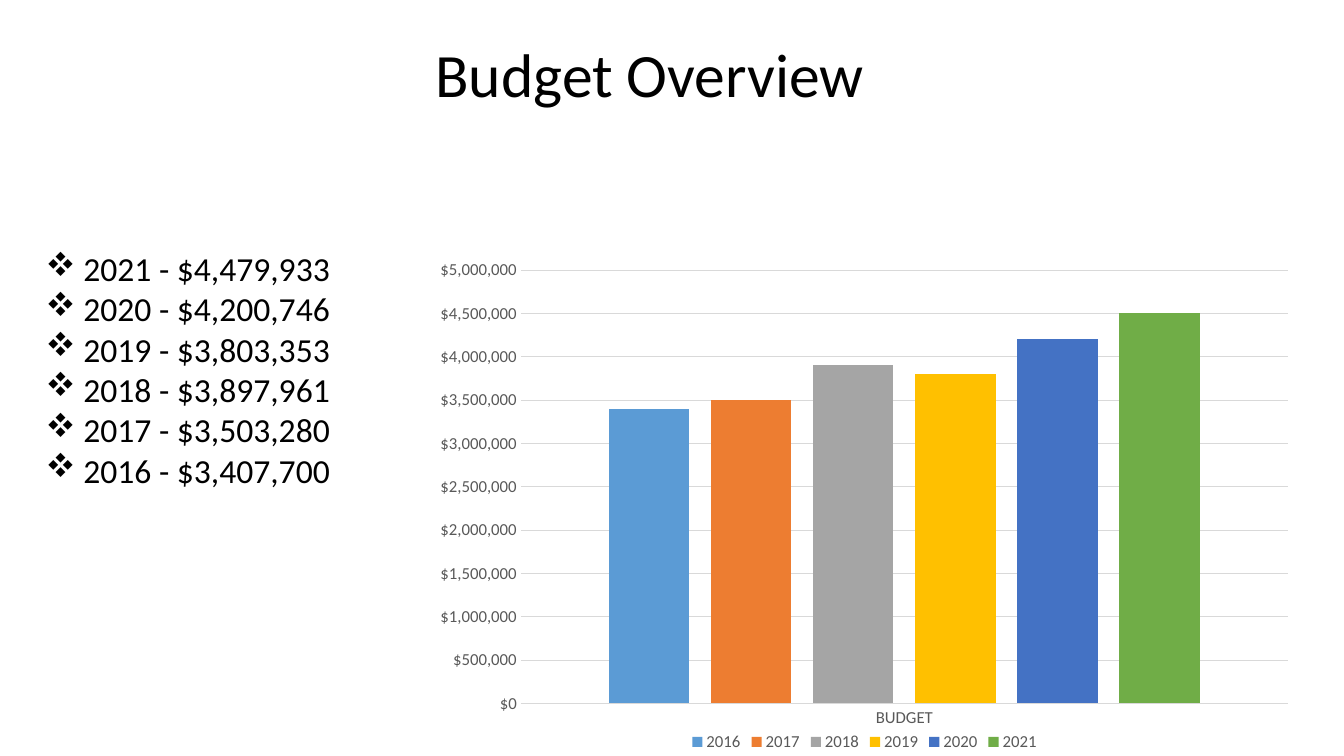
from lxml.etree import SubElement
from pptx import Presentation
from pptx.chart.data import CategoryChartData
from pptx.dml.color import RGBColor
from pptx.enum.chart import XL_CHART_TYPE as CT, XL_LEGEND_POSITION as LP, XL_TICK_MARK as TM
from pptx.enum.text import PP_ALIGN as AL
from pptx.oxml import parse_xml
from pptx.oxml.ns import nsdecls, qn
from pptx.util import Pt

FONT = "Calibri"
COLORS = {
    "text": "000000", "label": "595959", "rule": "D9D9D9",
    "2016": "5B9BD5", "2017": "ED7D31", "2018": "A5A5A5",
    "2019": "FFC000", "2020": "4472C4", "2021": "70AD47",
}
BUDGETS = {
    "2016": 3407700, "2017": 3503280, "2018": 3897961,
    "2019": 3803353, "2020": 4200746, "2021": 4479933,
}


def rgb(name):
    return RGBColor.from_string(COLORS[name])


def style_font(font, size, color):
    font.name = FONT
    font.size = Pt(size)
    font.color.rgb = rgb(color)


def add_text(slide, box, lines, size=24, align=AL.LEFT, bullet=None, indent=0):
    tf = slide.shapes.add_textbox(*map(Pt, box)).text_frame
    tf.word_wrap = True
    for i, line in enumerate(lines):
        p = tf.paragraphs[0] if i == 0 else tf.add_paragraph()
        p.alignment = align
        r = p.add_run()
        r.text = line
        style_font(r.font, size, "text")
        if bullet:
            pPr = p._p.get_or_add_pPr()
            pPr.set("marL", str(Pt(indent)))
            pPr.set("indent", str(-Pt(indent)))
            SubElement(pPr, qn("a:buFont"), typeface="Wingdings", charset="2")
            SubElement(pPr, qn("a:buChar"), char=bullet)


def add_title(slide, box):
    add_text(slide, box, ["Budget Overview"], size=44, align=AL.CENTER)


def add_budget_list(slide, box):
    lines = [f"{year} - ${amount:,}" for year, amount in reversed(BUDGETS.items())]
    add_text(slide, box, lines, bullet="v", indent=27)


def set_plot_layout(chart, box, plot_box):
    area = chart._chartSpace.chart.plotArea
    for old in area.findall(qn("c:layout")):
        area.remove(old)
    shares = [length / box[2 + i % 2] for i, length in enumerate(plot_box)]
    sizes = "".join(f'<c:{k} val="{v:.4f}"/>' for k, v in zip("xywh", shares))
    area.insert(0, parse_xml(
        f'<c:layout {nsdecls("c")}><c:manualLayout><c:layoutTarget val="inner"/>'
        f'<c:xMode val="edge"/><c:yMode val="edge"/>{sizes}</c:manualLayout></c:layout>'))


def style_line(line):
    line.color.rgb = rgb("rule")
    line.width = Pt(0.75)


def add_budget_chart(slide, box):
    data = CategoryChartData(number_format='"$"#,##0')
    data.categories = ["BUDGET"]
    for year, amount in BUDGETS.items():
        data.add_series(year, [round(amount, -5)])
    chart = slide.shapes.add_chart(CT.COLUMN_CLUSTERED, *map(Pt, box), data).chart
    style_font(chart.font, 10, "text")
    chart.has_title = False
    chart.has_legend = True
    chart.legend.position = LP.BOTTOM
    chart.legend.include_in_layout = False
    style_font(chart.legend.font, 12, "label")

    plot = chart.plots[0]
    plot.gap_width = 219
    plot.overlap = -27
    plot.vary_by_categories = False
    for series in plot.series:
        series.format.fill.solid()
        series.format.fill.fore_color.rgb = rgb(series.name)

    for axis in (chart.category_axis, chart.value_axis):
        axis.major_tick_mark = axis.minor_tick_mark = TM.NONE
        style_font(axis.tick_labels.font, 12, "label")
    style_line(chart.category_axis.format.line)
    value = chart.value_axis
    value.minimum_scale = 0
    value.maximum_scale = 5000000
    value.major_unit = 500000
    value.tick_labels.number_format = '"$"#,##0'
    value.tick_labels.number_format_is_linked = False
    value.format.line.fill.background()
    style_line(value.major_gridlines.format.line)
    set_plot_layout(chart, box, (64, 30, 548, 309.5))


def main():
    prs = Presentation()
    prs.slide_width, prs.slide_height = Pt(960), Pt(540)
    slide = prs.slides.add_slide(prs.slide_layouts[6])
    add_title(slide, (0, 22, 928.5, 60.5))
    add_budget_list(slide, (25.5, 173.5, 259, 240))
    add_budget_chart(slide, (308, 163, 619, 377))
    prs.save("out.pptx")


if __name__ == "__main__":
    main()
